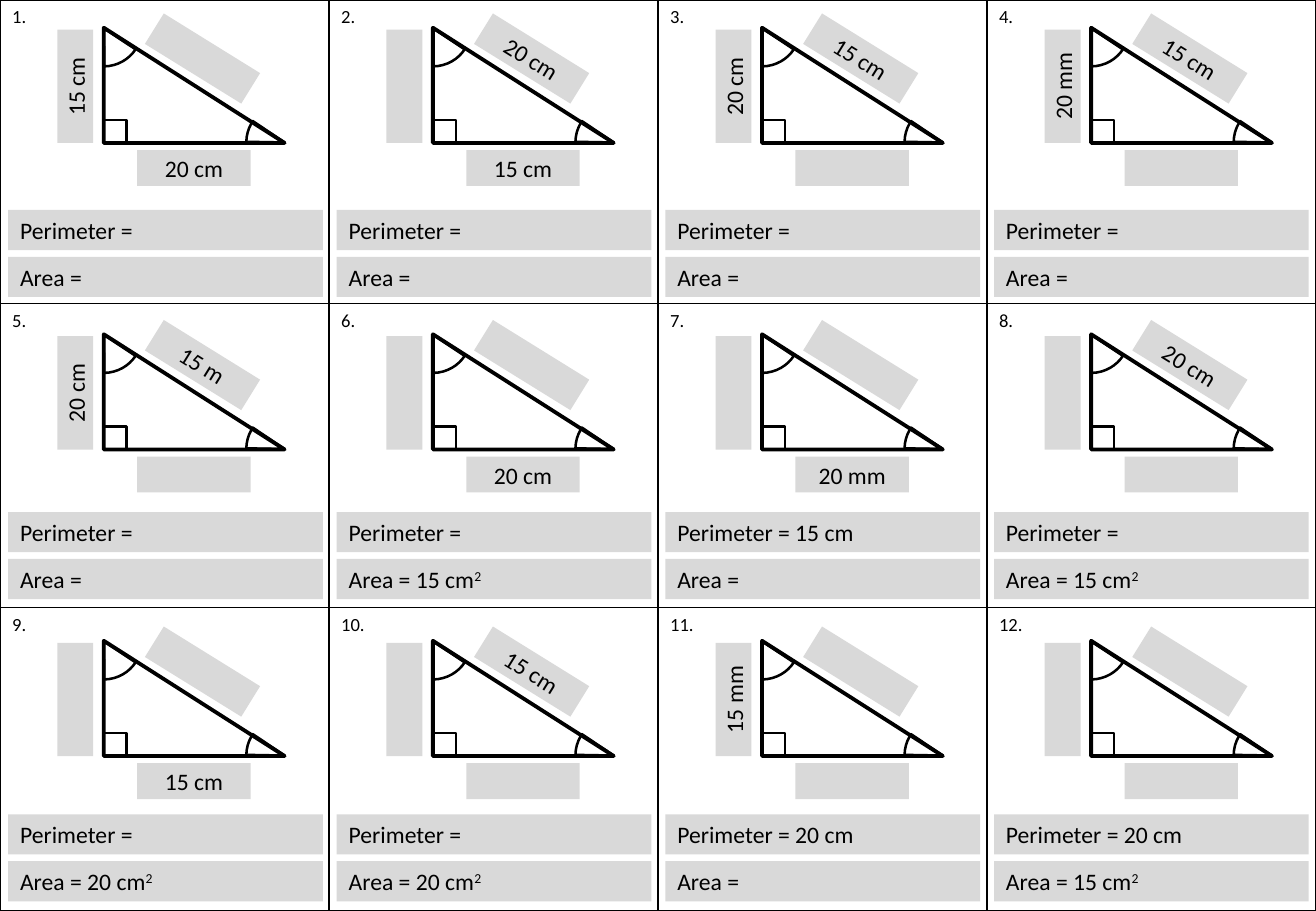
from dataclasses import dataclass

from lxml.etree import SubElement
from pptx import Presentation
from pptx.dml.color import RGBColor as Rgb
from pptx.enum.shapes import MSO_SHAPE as Kind
from pptx.enum.text import MSO_ANCHOR as Anchor, PP_ALIGN as Align
from pptx.oxml.ns import qn
from pptx.util import Cm, Pt


@dataclass(frozen=True)
class Theme:
    ink: Rgb = Rgb(0, 0, 0)
    panel: Rgb = Rgb(0xD9, 0xD9, 0xD9)
    font: str = "Calibri"
    small: Pt = Pt(11)
    body: Pt = Pt(14)
    thick: Pt = Pt(2.25)
    thin: Pt = Pt(1.5)
    rule: Pt = Pt(1)


THEME = Theme()
COLS, ROWS = 4, 3
WIDE, HIGH = 27.51, 19.05

# side, slope, base, perimeter, area
TASKS = [
    ("15 cm", "", "20 cm", "", ""),
    ("", "20 cm", "15 cm", "", ""),
    ("20 cm", "15 cm", "", "", ""),
    ("20 mm", "15 cm", "", "", ""),
    ("20 cm", "15 m", "", "", ""),
    ("", "", "20 cm", "", "15 cm"),
    ("", "", "20 mm", "15 cm", ""),
    ("", "20 cm", "", "", "15 cm"),
    ("", "", "15 cm", "", "20 cm"),
    ("", "15 cm", "", "", "20 cm"),
    ("15 mm", "", "", "20 cm", ""),
    ("", "", "", "20 cm", "15 cm"),
]


def set_all(item, values):
    for name, value in values.items():
        setattr(item, name, value)


def add_run(para, text, size, raised=False):
    run = para.add_run()
    run.text = text
    set_all(run.font, {"name": THEME.font, "size": size})
    run.font.color.rgb = THEME.ink
    if raised:
        run.font._element.set("baseline", "30000")


def add_form(shapes, kind, box):
    form = shapes.add_shape(kind, *map(Cm, box))
    form.shadow.inherit = False
    return form


def add_line_art(shapes, kind, box, width, angles=()):
    """Outline without fill; angles are the adjustments of a pie."""
    form = add_form(shapes, kind, box)
    form.fill.background()
    form.line.color.rgb = THEME.ink
    form.line.width = width
    for i, angle in enumerate(angles):
        form.adjustments[i] = angle


def add_panel(shapes, box, text, align, turn=0, power=""):
    """Grey box with optional text and a raised power after it."""
    form = add_form(shapes, Kind.RECTANGLE, box)
    form.fill.solid()
    form.fill.fore_color.rgb = THEME.panel
    form.line.fill.background()
    form.rotation = turn
    frame = form.text_frame
    set_all(frame, {"word_wrap": True, "vertical_anchor": Anchor.MIDDLE})
    para = frame.paragraphs[0]
    para.alignment = align
    if text:
        add_run(para, text, THEME.body)
    if power:
        add_run(para, power, THEME.body, raised=True)


def add_grid(slide):
    table = slide.shapes.add_table(ROWS, COLS, 0, 0, Cm(WIDE), Cm(HIGH)).table
    set_all(table, {"first_row": False, "horz_banding": False})
    for i, cell in enumerate(table.iter_cells(), 1):
        add_run(cell.text_frame.paragraphs[0], f"{i}.", THEME.small)
        props = cell._tc.get_or_add_tcPr()
        for edge in ("lnL", "lnR", "lnT", "lnB"):
            line = SubElement(props, qn(f"a:{edge}"), w=str(THEME.rule))
            fill = SubElement(line, qn("a:solidFill"))
            SubElement(fill, qn("a:srgbClr"), val=str(THEME.ink))
        cell.fill.background()


def add_figure(slide, col, row, side, slope, base):
    """Right triangle with its angle marks and three side labels."""
    shapes = slide.shapes.add_group_shape().shapes
    left, top = 2.17 + 6.88 * col, 0.58 + 6.41 * row

    def place(x, y, wide, high):
        return left + x, top + y, wide, high

    def label(x, y, text, turn=0):
        add_panel(shapes, place(x, y, 2.37, 0.75), text, Align.CENTER, turn)

    add_line_art(shapes, Kind.RIGHT_TRIANGLE, place(0, 0, 3.78, 2.41), THEME.thick)
    label(0.7, 2.56, base)
    add_line_art(shapes, Kind.RECTANGLE, place(0, 1.93, 0.48, 0.48), THEME.thin)
    for x, y, angles in ((2.98, 1.6, (108.57, 128.35)),
                         (-0.8, -0.79, (20.21, 53.52))):
        add_line_art(shapes, Kind.PIE, place(x, y, 1.6, 1.6), THEME.thin, angles)
    label(0.88, 0.27, slope, 31.8)
    label(-1.78, 0.85, side, 270)


def add_answers(slide, col, row, rim, area):
    left, top = 0.17 + 6.87 * col, 4.39 + 6.32 * row
    lines = (("Perimeter", rim, ""), ("Area", area, "2" if area else ""))
    for i, (name, value, power) in enumerate(lines):
        text = f"{name} = {value}".strip()
        box = left, top + 0.98 * i, 6.58, 0.84
        add_panel(slide.shapes, box, text, Align.LEFT, power=power)


def main():
    deck = Presentation()
    set_all(deck, {"slide_width": Cm(WIDE), "slide_height": Cm(HIGH)})
    slide = deck.slides.add_slide(deck.slide_layouts[6])
    add_grid(slide)
    for i, (side, slope, base, rim, area) in enumerate(TASKS):
        row, col = divmod(i, COLS)
        add_answers(slide, col, row, rim, area)
        add_figure(slide, col, row, side, slope, base)
    deck.save("out.pptx")


if __name__ == "__main__":
    main()
